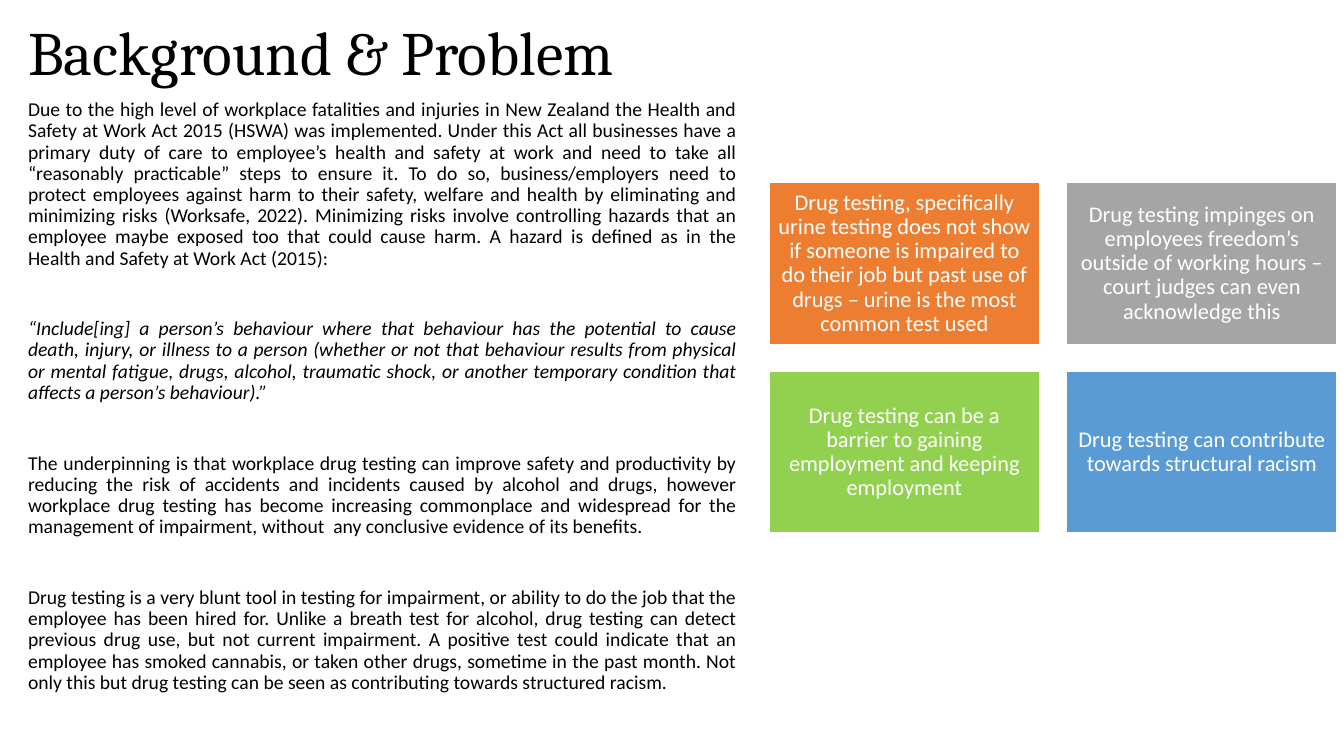
"""Build the Background & Problem slide."""
from pptx import Presentation
from pptx.dml.color import RGBColor
from pptx.enum import shapes, text
from pptx.util import Inches, Pt

TITLE = "Background & Problem"
BODY = [
    ("Due to the high level of workplace fatalities and injuries in New Zealand the Health and Safety at Work Act 2015 (HSWA) was implemented. Under this Act all businesses have a primary duty of care to employee’s health and safety at work and need to take all “reasonably practicable” steps to ensure it. To do so, business/employers need to protect employees against harm to their safety, welfare and health by eliminating and minimizing risks (Worksafe, 2022). Minimizing risks involve controlling hazards that an employee maybe exposed too that could cause harm. A hazard is defined as in the Health and Safety at Work Act (2015):", False),
    ("“Include[ing] a person’s behaviour where that behaviour has the potential to cause death, injury, or illness to a person (whether or not that behaviour results from physical or mental fatigue, drugs, alcohol, traumatic shock, or another temporary condition that affects a person’s behaviour).”", True),
    ("The underpinning is that workplace drug testing can improve safety and productivity by reducing the risk of accidents and incidents caused by alcohol and drugs, however workplace drug testing has become increasing commonplace and widespread for the management of impairment, without  any conclusive evidence of its benefits.", False),
    ("Drug testing is a very blunt tool in testing for impairment, or ability to do the job that the employee has been hired for. Unlike a breath test for alcohol, drug testing can detect previous drug use, but not current impairment. A positive test could indicate that an employee has smoked cannabis, or taken other drugs, sometime in the past month. Not only this but drug testing can be seen as contributing towards structured racism.", False),
]
CARDS = [
    ("orange", "Drug testing, specifically urine testing does not show if someone is impaired to do their job but past use of drugs – urine is the most common test used"),
    ("gray", "Drug testing impinges on employees freedom’s outside of working hours – court judges can even acknowledge this"),
    ("green", "Drug testing can be a barrier to gaining employment and keeping employment"),
    ("blue", "Drug testing can contribute towards structural racism"),
]
COLORS = {"black": "000000", "white": "FFFFFF", "orange": "ED7D31",
          "gray": "A5A5A5", "green": "92D050", "blue": "5B9BD5"}
LEFT, TOP, WIDE, HIGH = 7.63, 1.81, 2.68, 1.61
STEP_X, STEP_Y = 2.95, 1.87


def color(name):
    return RGBColor.from_string(COLORS[name])


def style(para, size, name, align, face="Calibri"):
    para.alignment = align
    para.line_spacing = 0.9
    para.font.size = Pt(size)
    para.font.name = face
    para.font.color.rgb = color(name)


def add_title(slide):
    title = slide.shapes.title
    title.left, title.top = Inches(0.18), Inches(0.12)
    title.width, title.height = Inches(7.13), Inches(0.86)
    frame = title.text_frame
    frame.text = TITLE
    frame.vertical_anchor = text.MSO_ANCHOR.MIDDLE
    style(frame.paragraphs[0], 44, "black", text.PP_ALIGN.LEFT, "Cambria")


def add_body(slide):
    box = slide.shapes.add_textbox(Inches(0.18), Inches(0.94), Inches(7.23), Inches(6.12))
    frame = box.text_frame
    frame.word_wrap = True
    for i, (words, slant) in enumerate(BODY):
        para = frame.add_paragraph() if i else frame.paragraphs[0]
        para.text = words
        style(para, 14, "black", text.PP_ALIGN.JUSTIFY)
        para.font.italic = slant
        para.space_before = Pt(35.4 if i else 0)


def add_cards(slide):
    for i, (fill, words) in enumerate(CARDS):
        row, col = divmod(i, 2)
        card = slide.shapes.add_shape(
            shapes.MSO_SHAPE.RECTANGLE, Inches(LEFT + col * STEP_X),
            Inches(TOP + row * STEP_Y), Inches(WIDE), Inches(HIGH))
        card.shadow.inherit = False
        card.fill.solid()
        card.fill.fore_color.rgb = color(fill)
        card.line.color.rgb = color("white")
        card.line.width = Pt(1)
        frame = card.text_frame
        frame.word_wrap = True
        frame.vertical_anchor = text.MSO_ANCHOR.MIDDLE
        frame.margin_left = frame.margin_right = Inches(0.07)
        frame.margin_top = frame.margin_bottom = Inches(0.07)
        frame.text = words
        style(frame.paragraphs[0], 16, "white", text.PP_ALIGN.CENTER)


def main():
    deck = Presentation()
    deck.slide_width, deck.slide_height = Inches(13.33), Inches(7.5)
    slide = deck.slides.add_slide(deck.slide_layouts[5])
    add_title(slide)
    add_body(slide)
    add_cards(slide)
    deck.save("out.pptx")


if __name__ == "__main__":
    main()
